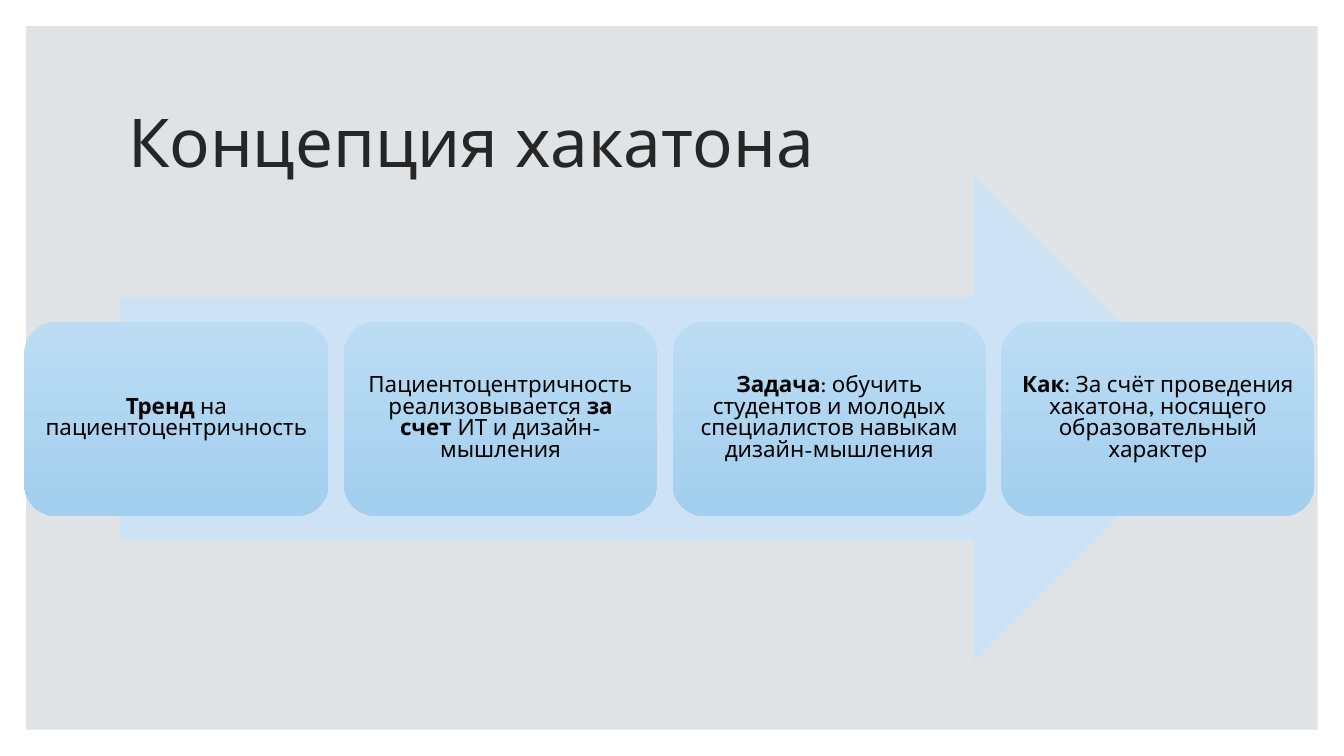
from pptx import Presentation
from pptx.dml.color import RGBColor
from pptx.enum.shapes import MSO_SHAPE
from pptx.enum.text import MSO_ANCHOR, MSO_AUTO_SIZE, PP_ALIGN
from pptx.util import Inches, Pt

FONT = "League Spartan"
COLORS = {
    "panel": "DFE3E5",
    "arrow": "CDE3F5",
    "card top": "BCDCF4",
    "card bottom": "A2CFEE",
    "title": "262626",
    "text": "000000",
}

# Slide and card grid, in inches
WIDTH, HEIGHT, MARGIN = 13.33, 7.5, 0.26
GRID_LEFT, PITCH, GAP = 0.15, 3.26, 0.15
CARD_TOP, CARD_HEIGHT = 3.19, 1.93
FIRST_TRIM = 0.09

# Each card is a list of (text, bold) spans
CARDS = [
    [("Тренд", True), (" на пациентоцентричность", False)],
    [("Пациентоцентричность реализовывается ", False), ("за счет ", True),
     ("ИТ и дизайн-мышления", False)],
    [("Задача", True),
     (": обучить студентов и молодых специалистов навыкам дизайн-мышления", False)],
    [("Как", True),
     (": За счёт проведения хакатона, носящего образовательный характер", False)],
]


def write(shape, spans, size, color, align, spacing, inset):
    frame = shape.text_frame
    frame.word_wrap = True
    frame.auto_size = MSO_AUTO_SIZE.NONE
    frame.vertical_anchor = MSO_ANCHOR.MIDDLE
    frame.margin_left = frame.margin_right = Inches(inset)
    frame.margin_top = frame.margin_bottom = Inches(inset)
    para = frame.paragraphs[0]
    para.alignment = align
    para.line_spacing = spacing
    for text, bold in spans:
        span = para.add_run()
        span.text = text
        span.font.name = FONT
        span.font.size = Pt(size)
        span.font.bold = bold
        span.font.color.rgb = RGBColor.from_string(COLORS[color])


def add_block(page, kind, left, top, width, height, color=None):
    shape = page.shapes.add_shape(
        kind, Inches(left), Inches(top), Inches(width), Inches(height))
    shape.shadow.inherit = False
    shape.line.fill.background()
    if color:
        shape.fill.solid()
        shape.fill.fore_color.rgb = RGBColor.from_string(COLORS[color])
    return shape


deck = Presentation()
deck.slide_width, deck.slide_height = Inches(WIDTH), Inches(HEIGHT)
page = deck.slides.add_slide(deck.slide_layouts[5])

# Title, with the grey panel behind it
title = page.shapes.title
title.left, title.top = Inches(1.17), Inches(0.7)
title.width, title.height = Inches(11), Inches(1.5)
write(title, [("Концепция хакатона", False)], size=48, color="title",
      align=PP_ALIGN.LEFT, spacing=0.9, inset=0.1)
panel = add_block(page, MSO_SHAPE.RECTANGLE, MARGIN, MARGIN,
                  WIDTH - 2 * MARGIN, HEIGHT - 2 * MARGIN, "panel")
title.element.addprevious(panel.element)

# Arrow under the cards
add_block(page, MSO_SHAPE.RIGHT_ARROW, 1.19, 1.74, 10.88, 4.83, "arrow")

# Row of cards; the first is trimmed on its left side
for column, spans in enumerate(CARDS):
    trim = FIRST_TRIM if column == 0 else 0
    card = add_block(page, MSO_SHAPE.ROUNDED_RECTANGLE,
                     GRID_LEFT + column * PITCH + trim, CARD_TOP,
                     PITCH - GAP - trim, CARD_HEIGHT)
    card.fill.gradient()
    card.fill.gradient_angle = 270
    for stop, position, color in zip(card.fill.gradient_stops, (0, 1),
                                     ("card top", "card bottom")):
        stop.position = position
        stop.color.rgb = RGBColor.from_string(COLORS[color])
    write(card, spans, size=16, color="text",
          align=PP_ALIGN.CENTER, spacing=0.8, inset=0.07)

deck.save("out.pptx")
